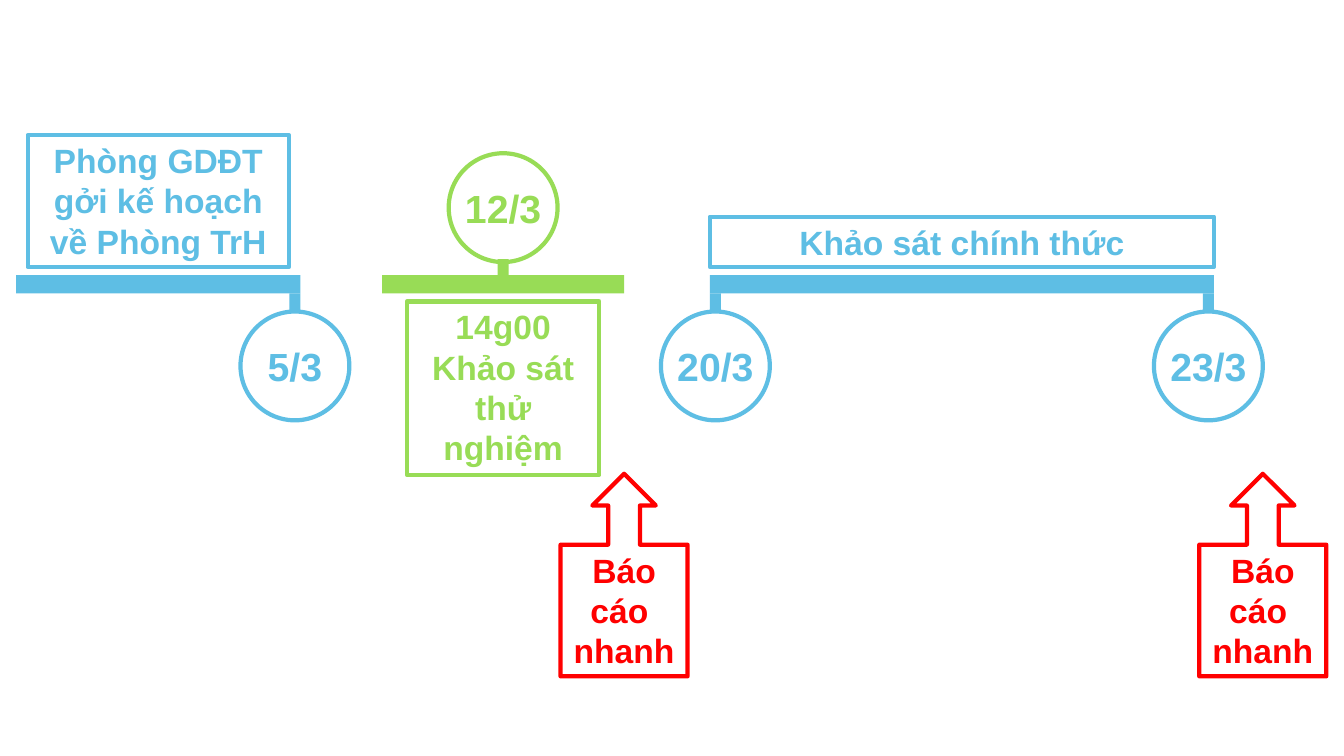
from dataclasses import dataclass

from pptx import Presentation
from pptx.dml.color import RGBColor
from pptx.enum.shapes import MSO_SHAPE as Shape
from pptx.enum.text import MSO_ANCHOR as Anchor, MSO_AUTO_SIZE as AutoSize, PP_ALIGN as Align
from pptx.util import Inches, Pt


@dataclass(frozen=True)
class Theme:
    blue: str = "5EBEE4"
    green: str = "98DC56"
    red: str = "FF0000"
    font: str = "Arial"
    label_size: int = 24
    date_size: int = 28
    outline: int = 3


@dataclass(frozen=True)
class Box:
    left: float
    top: float
    width: float
    height: float

    @property
    def right(self):
        return self.left + self.width

    @property
    def bottom(self):
        return self.top + self.height

    @property
    def center(self):
        return self.left + self.width / 2


THEME = Theme()
BAR_TOP, BAR_HEIGHT = 2.73, 0.18
STEM_WIDTH, STEM_HEIGHT = 0.11, 0.18
DATE_DIAMETER = 1.08
LABEL_GAP = 0.08
REPORT_TOP, REPORT_WIDTH, REPORT_HEIGHT = 4.7, 1.26, 2.01


def add_block(slide, kind, box, fill=None, outline=None):
    block = slide.shapes.add_shape(
        kind, Inches(box.left), Inches(box.top), Inches(box.width), Inches(box.height)
    )
    block.shadow.inherit = False
    if fill:
        block.fill.solid()
        block.fill.fore_color.rgb = RGBColor.from_string(fill)
    else:
        block.fill.background()
    if outline:
        block.line.color.rgb = RGBColor.from_string(outline)
        block.line.width = Pt(THEME.outline)
    else:
        block.line.fill.background()
    return block


def write_text(block, lines, color, size=THEME.label_size, anchor=Anchor.TOP, inset=None, grow=True):
    frame = block.text_frame
    frame.word_wrap = True
    frame.vertical_anchor = anchor
    if grow:
        frame.auto_size = AutoSize.SHAPE_TO_FIT_TEXT
    if inset is not None:
        frame.margin_left = frame.margin_right = Inches(inset)
        frame.margin_top = frame.margin_bottom = Inches(inset)
    for index, line in enumerate(lines):
        paragraph = frame.paragraphs[0] if index == 0 else frame.add_paragraph()
        paragraph.alignment = Align.CENTER
        run = paragraph.add_run()
        run.text = line
        run.font.name = THEME.font
        run.font.size = Pt(size)
        run.font.bold = True
        run.font.color.rgb = RGBColor.from_string(color)


def add_date(slide, bar, center, date, color, above=False):
    stem_top = bar.top - 0.16 if above else bar.bottom
    circle_top = stem_top + 0.03 - DATE_DIAMETER if above else stem_top + STEM_HEIGHT
    circle_box = Box(center - DATE_DIAMETER / 2, circle_top, DATE_DIAMETER, DATE_DIAMETER)
    circle = add_block(slide, Shape.OVAL, circle_box, outline=color)
    write_text(circle, [date], color, size=THEME.date_size, anchor=Anchor.MIDDLE, inset=0, grow=False)
    stem_box = Box(center - STEM_WIDTH / 2, stem_top, STEM_WIDTH, STEM_HEIGHT)
    add_block(slide, Shape.RECTANGLE, stem_box, fill=color)


def add_label(slide, bar, lines, width, height, color, above=True):
    top = bar.top - LABEL_GAP - height if above else bar.bottom + LABEL_GAP
    label = add_block(
        slide, Shape.RECTANGLE, Box(bar.center - width / 2, top, width, height), outline=color
    )
    write_text(label, lines, color)


def add_phase(slide, bar, color, dates, lines, label_size, label_above=True):
    add_block(slide, Shape.RECTANGLE, bar, fill=color)
    for center, date in dates:
        add_date(slide, bar, center, date, color, above=not label_above)
    add_label(slide, bar, lines, *label_size, color, above=label_above)


def add_report(slide, box):
    report = add_block(slide, Shape.UP_ARROW_CALLOUT, box, outline=THEME.red)
    write_text(report, ["Báo", "cáo ", "nhanh"], THEME.red)


def build_timeline(slide):
    plan = Box(0.16, BAR_TOP, 2.82, BAR_HEIGHT)
    trial = Box(3.79, BAR_TOP, 2.4, BAR_HEIGHT)
    survey = Box(7.04, BAR_TOP, 5, BAR_HEIGHT)
    half_stem = STEM_WIDTH / 2
    survey_end = survey.right - half_stem

    add_phase(
        slide, plan, THEME.blue, [(plan.right - half_stem, "5/3")],
        ["Phòng GDĐT gởi kế hoạch", "về Phòng TrH"], (2.59, 1.31),
    )
    add_phase(
        slide, trial, THEME.green, [(trial.center, "12/3")],
        ["14g00", "Khảo sát thử nghiệm"], (1.91, 1.72), label_above=False,
    )
    add_phase(
        slide, survey, THEME.blue,
        [(survey.left + half_stem, "20/3"), (survey_end, "23/3")],
        ["Khảo sát chính thức"], (5, 0.5),
    )
    for center in (trial.right, survey_end + DATE_DIAMETER / 2):
        add_report(slide, Box(center - REPORT_WIDTH / 2, REPORT_TOP, REPORT_WIDTH, REPORT_HEIGHT))


def main():
    deck = Presentation()
    deck.slide_width, deck.slide_height = Inches(13.33), Inches(7.5)
    build_timeline(deck.slides.add_slide(deck.slide_layouts[6]))
    deck.save("out.pptx")


if __name__ == "__main__":
    main()
